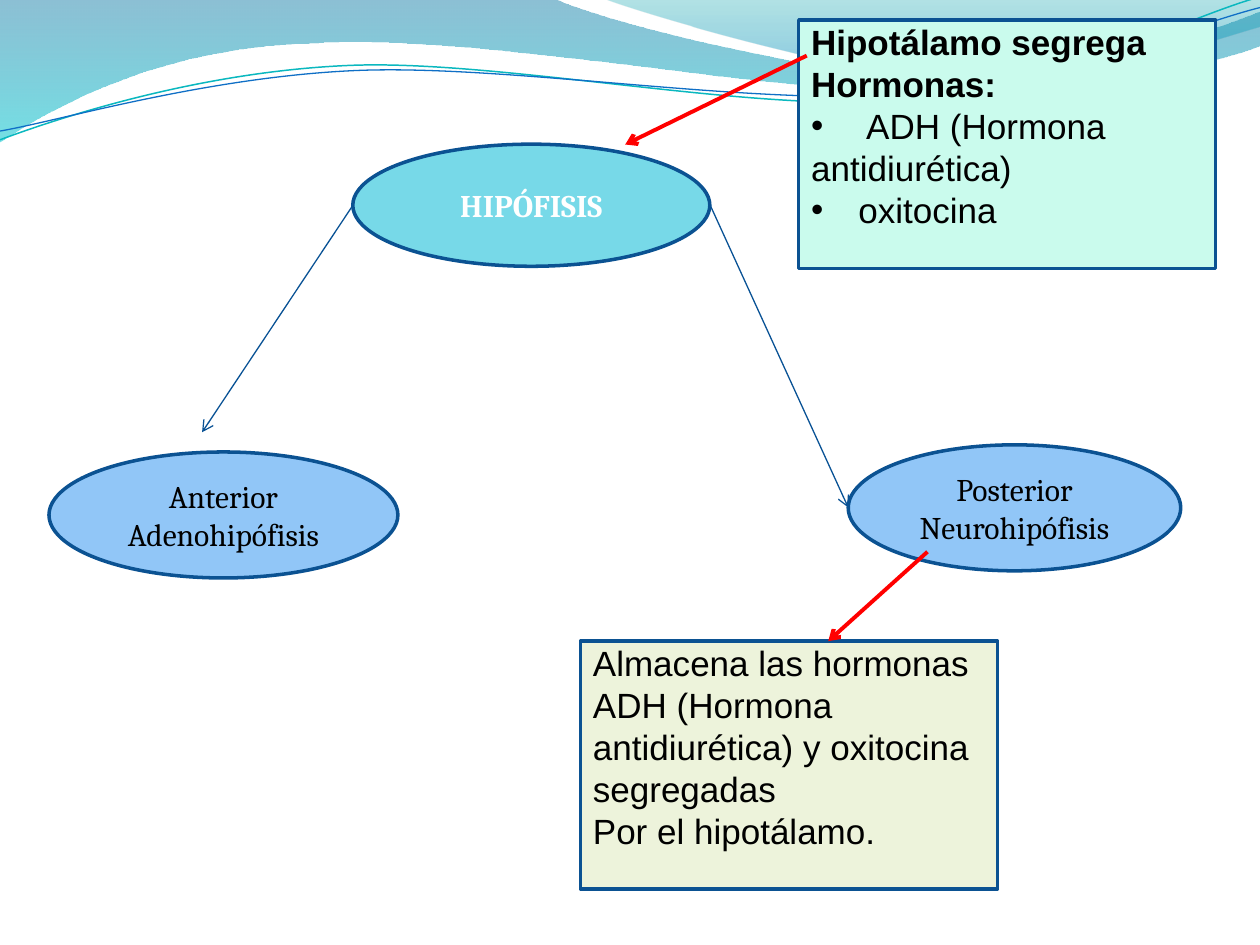
"""Build a slide on the pituitary gland, its two lobes and their hormones."""
import math

import pptx
import pptx.dml.color
import pptx.enum.shapes
import pptx.enum.text
import pptx.oxml.ns
import pptx.util
from lxml import etree

Pt = pptx.util.Pt
RGB = pptx.dml.color.RGBColor.from_string
qn = pptx.oxml.ns.qn
MSO_SHAPE = pptx.enum.shapes.MSO_SHAPE
ALIGN = pptx.enum.text.PP_ALIGN
ANCHOR = pptx.enum.text.MSO_ANCHOR
COLORS = {
    "wave_blue": "0074A1", "wave_cyan": "00C6CF", "wave_teal": "00A1A9", "wave_sky": "008BBF",
    "strand_teal": "0AB8BF", "strand_blue": "0F6FC6", "gland": "77D9E8", "lobe": "91C6F7",
    "outline": "0B5292", "branch": "095295", "red": "FF0000", "mint": "CAFBED",
    "cream": "EDF3DB", "black": "000000", "white": "FFFFFF",
}


def draw_curve(page, bounds, rotation, segments, close):
    """Draw a freeform from a start point, then points (2 numbers) and Bezier curves (6)."""
    left, top, width, height = bounds
    center_x, center_y = left + width / 2, top + height / 2
    cosine, sine = math.cos(math.radians(rotation)), math.sin(math.radians(rotation))
    ends = [(Pt(segment[-2]), Pt(segment[-1])) for segment in segments]
    builder = page.shapes.build_freeform(*ends[0], scale=1.0)
    builder.add_line_segments(ends[1:], close=close)
    curve = builder.convert_to_shape()
    curve.shadow.inherit = False
    curve.left, curve.top, curve.width, curve.height = [Pt(value) for value in bounds]
    curve.rotation = rotation
    outline = next(curve._element.iter(qn("a:path")))
    outline.set("w", str(Pt(width)))
    outline.set("h", str(Pt(height)))
    for child in list(outline):
        outline.remove(child)
    for index, segment in enumerate(segments):
        tag = "a:cubicBezTo" if len(segment) == 6 else "a:lnTo" if index else "a:moveTo"
        step = etree.SubElement(outline, qn(tag))
        for x, y in zip(segment[::2], segment[1::2]):
            across, down = x - center_x, y - center_y
            local_x = across * cosine + down * sine + width / 2
            local_y = down * cosine - across * sine + height / 2
            etree.SubElement(step, qn("a:pt"), x=str(Pt(local_x)), y=str(Pt(local_y)))
    if close:
        etree.SubElement(outline, qn("a:close"))
    return curve


def add_block(page, kind, bounds, fill, paragraphs, font, size, color, margin_top):
    """Add an outlined shape whose paragraphs are (text, bold, bulleted)."""
    box = page.shapes.add_shape(kind, *[Pt(value) for value in bounds])
    box.shadow.inherit = False
    box.fill.solid()
    box.fill.fore_color.rgb = RGB(COLORS[fill])
    box.line.color.rgb = RGB(COLORS["outline"])
    box.line.width = Pt(2)
    frame = box.text_frame
    frame.word_wrap = True
    frame.margin_top = Pt(margin_top)
    is_note = kind == MSO_SHAPE.RECTANGLE
    frame.vertical_anchor = ANCHOR.TOP if is_note else ANCHOR.MIDDLE
    for index, (text, bold, bulleted) in enumerate(paragraphs):
        para = frame.add_paragraph() if index else frame.paragraphs[0]
        para.alignment = ALIGN.LEFT if is_note else ALIGN.CENTER
        if is_note:
            para.line_spacing = Pt(24)
        if bulleted:
            properties = para._p.get_or_add_pPr()
            properties.set("marL", str(Pt(27)))
            properties.set("indent", str(-Pt(27)))
            etree.SubElement(properties, qn("a:buFont"), typeface="Arial")
            etree.SubElement(properties, qn("a:buChar"), char="•")
        span = para.add_run()
        span.text = text
        span.font.name = font
        span.font.size = Pt(size)
        span.font.bold = bold
        span.font.color.rgb = RGB(COLORS[color])


deck = pptx.Presentation()
deck.slide_width, deck.slide_height = Pt(720), Pt(540)
page = deck.slides.add_slide(deck.slide_layouts[6])

waves = [
    ((-0.7, -0.7, 721.4, 82.1),
     [(0, 0), (316.8, -0.7), (342.7, 12.2, 478, 45.4, 545.8, 45.4),
      (614.2, 45.4, 689.8, 18.7, 720, 6.5), (720.7, 26),
      (707.8, 31.7, 626.4, 54.7, 537.1, 54), (447.8, 54, 275, 20.2, 185, 24.5),
      (92.9, 25.9, 33.1, 59.8, -0.7, 81.4), (0, 0)],
     [(0, "wave_blue", 45), (1, "wave_cyan", 55)]),
    ((344.9, -0.7, 375.1, 50.4),
     [(344.9, -0.7), (366.5, 7.9, 491, 44.6, 553.7, 46.8),
      (616.3, 49.7, 691.9, 23, 720, 15.1), (720, 0), (344.9, -0.7)],
     [(0, "wave_teal", 30), (0.8, "wave_sky", 45)]),
]
for bounds, segments, stops in waves:
    wave = draw_curve(page, bounds, 0, segments, True)
    wave.line.fill.background()
    wave.fill.gradient()
    wave.fill.gradient_angle = 270
    for stop, (position, color, opacity) in zip(wave.fill.gradient_stops, stops):
        stop.position = position
        stop.color.rgb = RGB(COLORS[color])
    for tone, (position, color, opacity) in zip(wave._element.spPr.iter(qn("a:srgbClr")), stops):
        etree.SubElement(tone, qn("a:alpha"), val=str(opacity * 1000))

strands = [
    ((-1.4, 15.8, 721.4, 51.1),
     [(0, 79.9), (34.6, 67, 113.8, 41, 199.4, 37.4), (284.4, 33.8, 427, 64.1, 513.4, 57.6),
      (599.8, 51.1, 675.4, 10.8, 718.6, -1.4)], "strand_teal", 0.85),
    ((-1.4, 21.6, 722.2, 41.8),
     [(0, 74.9), (33.8, 69.1, 118.1, 43.9, 203.8, 40.3), (290.2, 36.7, 429.8, 60.5, 516.2, 54),
      (601.9, 48.2, 677.5, 15.1, 720, 4.3)], "strand_blue", 0.75),
]
for bounds, segments, color, width in strands:
    strand = draw_curve(page, bounds, 357.3, segments, False)
    strand.fill.background()
    strand.line.color.rgb = RGB(COLORS[color])
    strand.line.width = Pt(width)

ellipses = [
    ((201.6, 82.4, 204, 69.8), "gland", [("HIPÓFISIS", True, False)], "white"),
    ((28, 258.3, 199.4, 72), "lobe",
     [("Anterior", False, False), ("Adenohipófisis", False, False)], "black"),
    ((484.7, 254.2, 190, 72), "lobe", [("Posterior Neurohipófisis", False, False)], "black"),
]
for bounds, fill, paragraphs, color in ellipses:
    add_block(page, MSO_SHAPE.OVAL, bounds, fill, paragraphs, "Cambria", 18, color, 3.6)

notes = [
    ((331.7, 366.3, 238.3, 141.8), "cream", 0.5,
     [("Almacena las hormonas ADH (Hormona", False, False),
      ("antidiurética) y oxitocina", False, False),
      ("segregadas", False, False), ("Por el hipotálamo.", False, False)]),
    ((456.4, 11.6, 238.3, 141.8), "mint", 0,
     [("Hipotálamo segrega", True, False), ("Hormonas:", True, False),
      (" ADH (Hormona", False, True), ("antidiurética)", False, False),
      ("oxitocina", False, True)]),
]
for bounds, fill, margin_top, paragraphs in notes:
    add_block(page, MSO_SHAPE.RECTANGLE, bounds, fill, paragraphs, "Arial", 20, "black", margin_top)

arrows = [
    ((201.6, 117.4), (115.5, 247), "branch", 0.75),
    ((405.9, 117.4), (484.7, 290), "branch", 0.75),
    ((530, 315.3), (473.3, 366.4), "red", 2.25),
    ((461, 31.8), (357.3, 82.6), "red", 2.25),
]
for start, end, color, width in arrows:
    arrow = page.shapes.add_connector(
        pptx.enum.shapes.MSO_CONNECTOR.STRAIGHT, *[Pt(value) for value in start + end])
    arrow.line.color.rgb = RGB(COLORS[color])
    arrow.line.width = Pt(width)
    etree.SubElement(arrow.line._get_or_add_ln(), qn("a:tailEnd"), type="arrow")
    etree.SubElement(arrow._element.spPr, qn("a:effectLst"))

deck.save("out.pptx")
